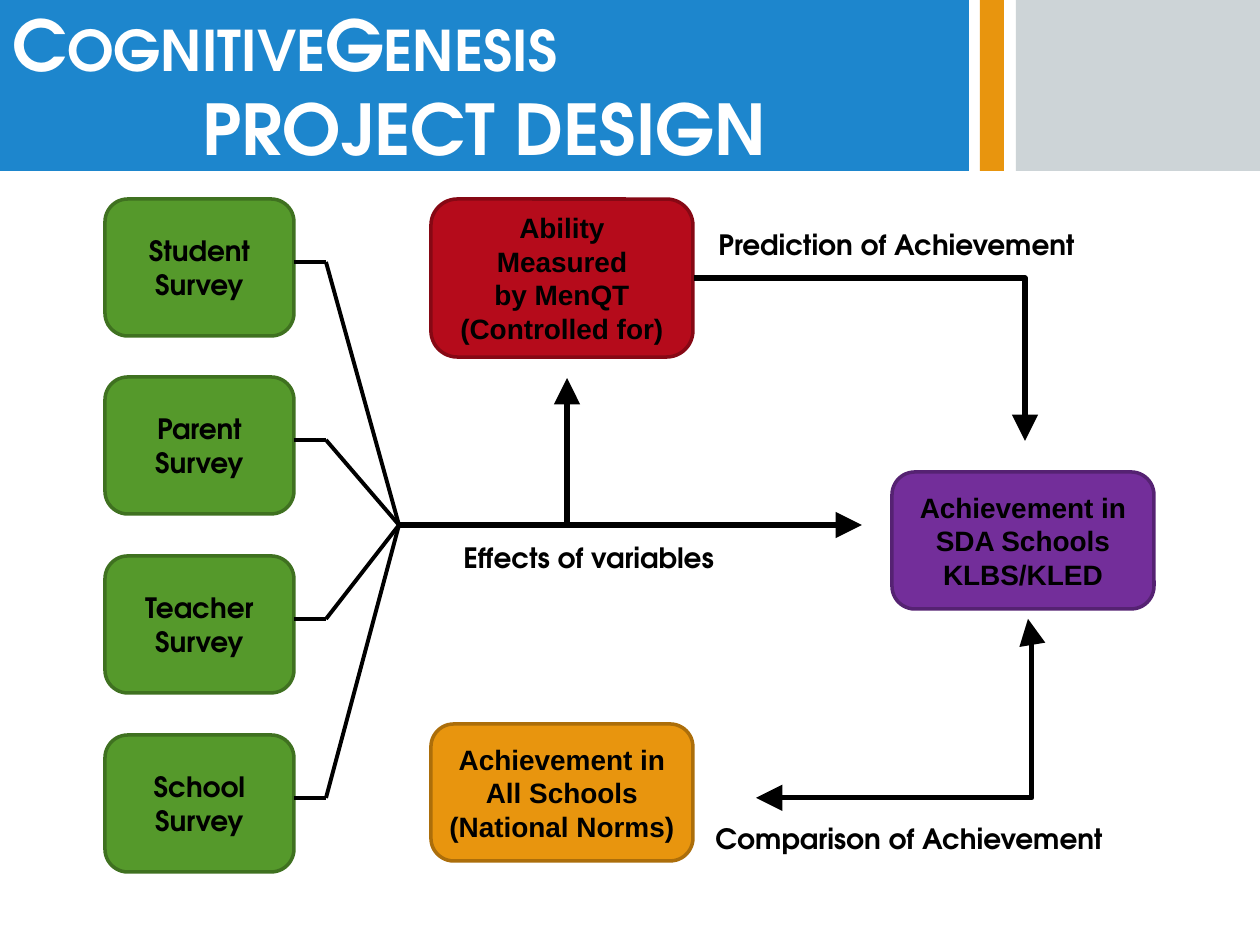
"""Build the CognitiveGenesis project design slide."""
from lxml.etree import SubElement
from pptx import Presentation
from pptx.dml.color import RGBColor
from pptx.enum.shapes import MSO_CONNECTOR as CONN, MSO_SHAPE as SHAPE
from pptx.enum.text import MSO_ANCHOR as ANCHOR, MSO_AUTO_SIZE as FIT, PP_ALIGN as ALIGN
from pptx.oxml.ns import qn
from pptx.util import Emu, Pt

SCALE = 914400 / 126
HEAD_FONT, BOX_FONT = "TeX Gyre Adventor", "Arial"
COLORS = {
    "white": "FFFFFF", "black": "000000", "gray": "CDD4D7", "blue": "1D86CD",
    "orange": "E8950E", "orange_edge": "AC6E0A", "green": "55992B", "green_edge": "3F7120",
    "red": "B50B1B", "red_edge": "860814", "purple": "732E9A", "purple_edge": "552272",
}
rgb = {name: RGBColor.from_string(value) for name, value in COLORS.items()}


def px(*lengths):
    return [Emu(round(n * SCALE)) for n in lengths]


def write(tf, lines, font, size, color, align):
    for i, line in enumerate(lines):
        p = tf.paragraphs[0] if i == 0 else tf.add_paragraph()
        p.alignment = align
        r = p.add_run()
        r.text = line
        r.font.name, r.font.size, r.font.bold = font, Pt(size), True
        r.font.color.rgb = rgb[color]


prs = Presentation()
prs.slide_width, prs.slide_height = px(1260, 945)
s = prs.slides.add_slide(prs.slide_layouts[5])

for left, width, color in [(1016, 244, "gray"), (980, 24, "orange")]:
    sp = s.shapes.add_shape(SHAPE.RECTANGLE, *px(left, 0, width, 171))
    sp.shadow.inherit = False
    sp.fill.solid()
    sp.fill.fore_color.rgb = rgb[color]
    sp.line.fill.background()

title = s.shapes.title
title.left, title.top, title.width, title.height = px(0, 0, 969, 171)
title.fill.solid()
title.fill.fore_color.rgb = rgb["blue"]
tf = title.text_frame
tf.vertical_anchor = ANCHOR.MIDDLE
tf.margin_top = tf.margin_bottom = 0
write(tf, ["CognitiveGenesis", "PROJECT DESIGN"], HEAD_FONT, 40, "white", ALIGN.CENTER)
tf.paragraphs[0].alignment = ALIGN.LEFT
tf.paragraphs[0].runs[0].font._element.set("cap", "small")

surveys = ["Student", "Parent", "Teacher", "School"]
survey_tops = [199 + i * 536 // 3 for i in range(len(surveys))]
boxes = [
    (105, top, 189, 137, "green", HEAD_FONT, [name, "Survey"])
    for name, top in zip(surveys, survey_tops)
] + [
    (431, 199, 262, 158, "red", BOX_FONT, ["Ability", "Measured", "by MenQT", "(Controlled for)"]),
    (892, 472, 262, 137, "purple", BOX_FONT, ["Achievement in", "SDA Schools", "KLBS/KLED"]),
    (431, 724, 262, 137, "orange", BOX_FONT, ["Achievement in", "All Schools", "(National Norms)"]),
]
for left, top, width, height, color, font, lines in boxes:
    sp = s.shapes.add_shape(SHAPE.ROUNDED_RECTANGLE, *px(left, top, width, height))
    sp.shadow.inherit = False
    sp.fill.solid()
    sp.fill.fore_color.rgb = rgb[color]
    sp.line.color.rgb = rgb[color + "_edge"]
    sp.line.width = Pt(2)
    tf = sp.text_frame
    tf.word_wrap = False
    tf.vertical_anchor = ANCHOR.MIDDLE
    write(tf, lines, font, 16, "black", ALIGN.CENTER)

labels = [
    (703, 815, 471, "Comparison of Achievement"),
    (706, 221, 445, "Prediction of Achievement"),
    (451, 534, 285, "Effects of variables"),
]
for left, top, width, text in labels:
    tf = s.shapes.add_textbox(*px(left, top, width, 47)).text_frame
    tf.word_wrap = False
    tf.auto_size = FIT.SHAPE_TO_FIT_TEXT
    write(tf, [text], HEAD_FONT, 16, "black", ALIGN.LEFT)

hub = (399, 525)
lines = []
for top in survey_tops:
    y = top + 63
    lines.append((CONN.STRAIGHT, (294, y), (326, y), 2.25, [], None))
    lines.append((CONN.STRAIGHT, (326, y), hub, 2.25, [], None))
lines += [
    (CONN.STRAIGHT, hub, (862, 525), 3, ["tailEnd"], None),
    (CONN.STRAIGHT, (567, 525), (567, 378), 3, ["tailEnd"], None),
    (CONN.ELBOW, (756, 798), (1028, 619), 3, ["headEnd", "tailEnd"], 101400),
    (CONN.ELBOW, (694, 278), (1025, 441), 3, ["tailEnd"], 100000),
]
for kind, start, end, weight, arrows, bend in lines:
    cn = s.shapes.add_connector(kind, *px(*start, *end))
    cn.line.color.rgb = rgb["black"]
    cn.line.width = Pt(weight)
    spPr = cn._element.spPr
    for arrow in arrows:
        SubElement(spPr.find(qn("a:ln")), qn("a:" + arrow), type="triangle", w="lg", len="lg")
    SubElement(spPr, qn("a:effectLst"))
    if bend:
        guides = spPr.find(qn("a:prstGeom")).find(qn("a:avLst"))
        SubElement(guides, qn("a:gd"), name="adj1", fmla=f"val {bend}")

prs.save("out.pptx")
